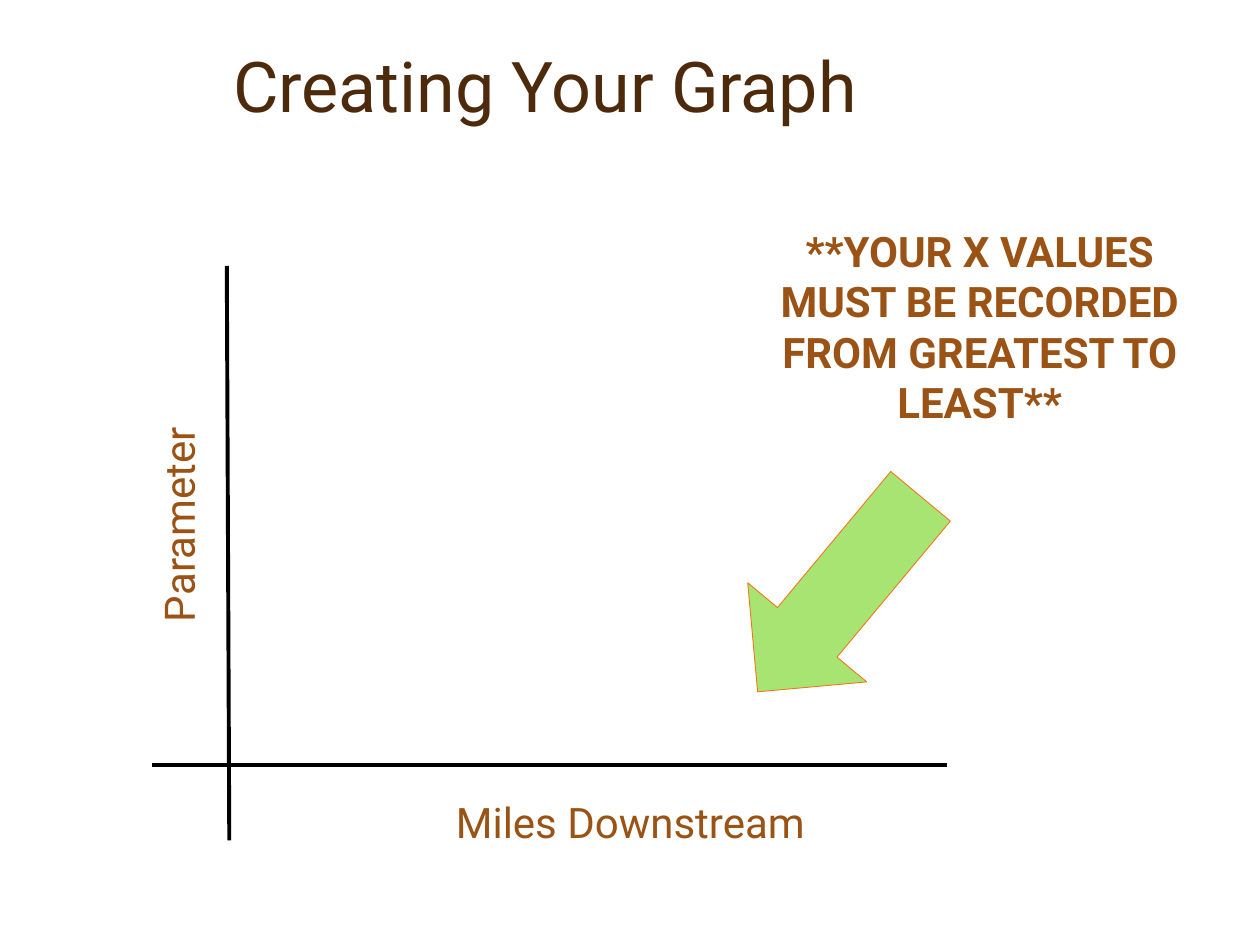
from dataclasses import dataclass

from lxml import etree
from pptx import Presentation
from pptx import util as u
from pptx.dml.color import RGBColor
from pptx.enum import shapes, text
from pptx.oxml import ns

SCALE = 9144  # EMU per px, 100 px to the inch


@dataclass
class Theme:
    font: str = "Roboto"
    title: str = "4D2A0B"
    body: str = "9A5315"
    axis: str = "000000"
    fill: str = "A7E472"
    edge: str = "F3771A"
    big: int = 40
    size: int = 24


def px(*vals):
    return [u.Emu(v * SCALE) for v in vals]


class Board:
    def __init__(self, slide, theme):
        self.slide = slide
        self.theme = theme

    def style(self, para, size, color, bold=False):
        for run in para.runs:
            font = run.font
            font.name = self.theme.font
            font.size = u.Pt(size)
            font.bold = bold
            font.color.rgb = RGBColor.from_string(color)

    def title(self, words, box):
        shape = self.slide.shapes.title
        shape.left, shape.top, shape.width, shape.height = px(*box)
        frame = shape.text_frame
        frame.text = words
        frame.auto_size = text.MSO_AUTO_SIZE.NONE
        frame.vertical_anchor = text.MSO_ANCHOR.BOTTOM
        para = frame.paragraphs[0]
        para.alignment = text.PP_ALIGN.LEFT
        para.line_spacing = 0.9
        self.style(para, self.theme.big, self.theme.title)

    def label(self, words, box, turn=0, wrap=False, bold=False,
              align=text.PP_ALIGN.LEFT):
        shape = self.slide.shapes.add_textbox(*px(*box))
        shape.rotation = turn
        frame = shape.text_frame
        frame.text = words
        frame.word_wrap = wrap
        frame.auto_size = text.MSO_AUTO_SIZE.SHAPE_TO_FIT_TEXT
        para = frame.paragraphs[0]
        para.alignment = align
        self.style(para, self.theme.size, self.theme.body, bold)

    def axis(self, ends):
        line = self.slide.shapes.add_connector(
            shapes.MSO_CONNECTOR.STRAIGHT, *px(*ends))
        line.line.color.rgb = RGBColor.from_string(self.theme.axis)
        line.line.width = u.Pt(2.25)
        etree.SubElement(line._element.spPr, ns.qn("a:effectLst"))

    def arrow(self, box, turn):
        shape = self.slide.shapes.add_shape(
            shapes.MSO_SHAPE.LEFT_ARROW, *px(*box))
        shape.rotation = turn
        shape.shadow.inherit = False
        shape.fill.solid()
        shape.fill.fore_color.rgb = RGBColor.from_string(self.theme.fill)
        shape.line.color.rgb = RGBColor.from_string(self.theme.edge)
        shape.line.width = u.Pt(0.5)


def main():
    deck = Presentation()
    deck.slide_width, deck.slide_height = px(1000, 750)
    board = Board(deck.slides.add_slide(deck.slide_layouts[5]), Theme())

    # Title
    board.title("Creating Your Graph", (175, -27, 825, 133))

    # Axes
    board.axis((180, 211, 182, 667))
    board.axis((752, 607, 121, 607))

    # Axis names
    board.label("Parameter", (40, 377, 203, 50), turn=270)
    board.label("Miles Downstream", (352, 627, 334, 50))

    # Advice on the x values
    board.label("**YOUR X VALUES MUST BE RECORDED FROM GREATEST TO LEAST**",
                (592, 174, 371, 212), wrap=True, bold=True,
                align=text.PP_ALIGN.CENTER)
    board.arrow((565, 410, 202, 123), 309.8)

    deck.save("out.pptx")


if __name__ == "__main__":
    main()
